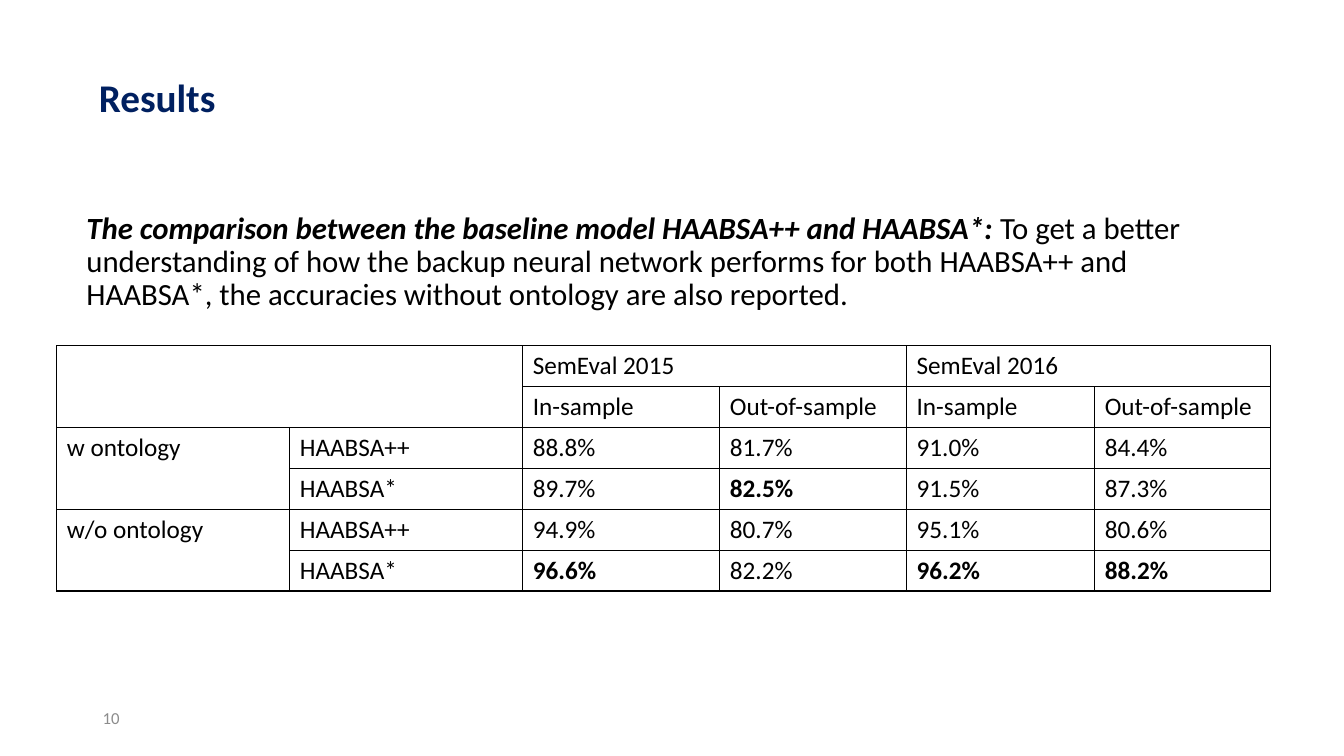
"""Build the results slide that compares HAABSA++ and HAABSA* accuracies."""
from dataclasses import dataclass

from lxml import etree
from pptx import Presentation
from pptx import util as u
from pptx.dml import color
from pptx.enum import text
from pptx.oxml import ns

FONT = "Calibri"
BLACK, NAVY, GREY = "000000", "002060", "8C8C8C"
COLUMN_WIDTHS = (166.4, 166.4, 140.8, 133.4, 134.4, 125.5)
ROW_HEIGHT = 29.2


@dataclass(frozen=True)
class Phrase:
    """A run of text with its look."""

    words: str
    size: float = 18
    colour: str = BLACK
    bold: bool = False
    italic: bool = False


@dataclass(frozen=True)
class Block:
    """A text frame's place in points, its phrases and line spacing."""

    left: float
    top: float
    width: float
    height: float
    phrases: tuple[Phrase, ...]
    spacing: float = 1.0
    anchor: text.MSO_ANCHOR = text.MSO_ANCHOR.MIDDLE


@dataclass(frozen=True)
class Entry:
    """A table cell with its row and column spans."""

    row: int
    column: int
    words: str
    bold: bool = False
    rows: int = 1
    columns: int = 1


TITLE = Block(63.4, 41, 896.6, 60.5, (Phrase("Results", 28, NAVY, True),), 0.9)
PAGE_NUMBER = Block(66.2, 500.4, 828, 25.2, (Phrase("10", 12, GREY),))
COMPARISON = Block(
    54.7, 148.3, 816.5, 342.7,
    (
        Phrase("The comparison between the baseline model HAABSA++ and HAABSA*: ",
               22, bold=True, italic=True),
        Phrase("To get a better understanding of how the backup neural network "
               "performs for both HAABSA++ and HAABSA*, the accuracies without "
               "ontology are also reported.", 22),
    ),
    0.9, text.MSO_ANCHOR.TOP,
)
SAMPLES = ("In-sample", "Out-of-sample") * 2
ACCURACIES = (
    ("HAABSA++", "88.8%", "81.7%", "91.0%", "84.4%"),
    ("HAABSA*", "89.7%", "82.5%", "91.5%", "87.3%"),
    ("HAABSA++", "94.9%", "80.7%", "95.1%", "80.6%"),
    ("HAABSA*", "96.6%", "82.2%", "96.2%", "88.2%"),
)
BEST = {"82.5%", "96.6%", "96.2%", "88.2%"}
ENTRIES = [
    Entry(0, 0, "", rows=2, columns=2),
    Entry(0, 2, "SemEval 2015", columns=2),
    Entry(0, 4, "SemEval 2016", columns=2),
    Entry(2, 0, "w ontology", rows=2),
    Entry(4, 0, "w/o ontology", rows=2),
    *(Entry(1, column, sample) for column, sample in enumerate(SAMPLES, 2)),
    *(Entry(row, column, value, value in BEST)
      for row, values in enumerate(ACCURACIES, 2)
      for column, value in enumerate(values, 1)),
]


def rgb(code: str) -> color.RGBColor:
    """Turn a hex string into a colour."""
    return color.RGBColor.from_string(code)


def add_phrase(paragraph, phrase: Phrase) -> None:
    """Add one formatted run to a paragraph."""
    run = paragraph.add_run()
    run.text = phrase.words
    run.font.name = FONT
    run.font.size = u.Pt(phrase.size)
    run.font.bold = phrase.bold
    run.font.italic = phrase.italic
    run.font.color.rgb = rgb(phrase.colour)


def fill_block(holder, block: Block) -> None:
    """Place a text holder and write its phrases."""
    holder.left, holder.top = u.Pt(block.left), u.Pt(block.top)
    holder.width, holder.height = u.Pt(block.width), u.Pt(block.height)
    frame = holder.text_frame
    frame.word_wrap = True
    frame.auto_size = text.MSO_AUTO_SIZE.NONE
    frame.vertical_anchor = block.anchor
    paragraph = frame.paragraphs[0]
    paragraph.alignment = text.PP_ALIGN.LEFT
    paragraph.line_spacing = block.spacing
    for phrase in block.phrases:
        add_phrase(paragraph, phrase)


def add_text(slide, block: Block) -> None:
    """Add a text box for a block."""
    fill_block(slide.shapes.add_textbox(0, 0, 0, 0), block)


def rule_cell(cell) -> None:
    """Give a cell thin black borders and no fill."""
    properties = cell._tc.get_or_add_tcPr()
    for side in ("lnL", "lnR", "lnT", "lnB"):
        border = etree.SubElement(properties, ns.qn(f"a:{side}"), w=str(u.Pt(1)))
        solid = etree.SubElement(border, ns.qn("a:solidFill"))
        etree.SubElement(solid, ns.qn("a:srgbClr"), val=BLACK)
    cell.fill.background()


def add_accuracy_table(slide) -> None:
    """Add the accuracy table with its merged headings."""
    row_count = len(ACCURACIES) + 2
    table = slide.shapes.add_table(
        row_count, len(COLUMN_WIDTHS), u.Pt(40.6), u.Pt(247),
        u.Pt(sum(COLUMN_WIDTHS)), u.Pt(ROW_HEIGHT * row_count)).table
    table.first_row = table.horz_banding = False
    for column, width in zip(table.columns, COLUMN_WIDTHS):
        column.width = u.Pt(width)
    for row in table.rows:
        row.height = u.Pt(ROW_HEIGHT)
    for cell in table.iter_cells():
        rule_cell(cell)
    for entry in ENTRIES:
        cell = table.cell(entry.row, entry.column)
        if entry.rows * entry.columns > 1:
            cell.merge(table.cell(entry.row + entry.rows - 1,
                                  entry.column + entry.columns - 1))
        if entry.words:
            add_phrase(cell.text_frame.paragraphs[0],
                       Phrase(entry.words, bold=entry.bold))


def main() -> None:
    """Build and save the slide."""
    deck = Presentation()
    deck.slide_width, deck.slide_height = u.Pt(960), u.Pt(540)
    slide = deck.slides.add_slide(deck.slide_layouts.get_by_name("Title Only"))
    add_accuracy_table(slide)
    fill_block(slide.shapes.title, TITLE)
    add_text(slide, PAGE_NUMBER)
    add_text(slide, COMPARISON)
    deck.save("out.pptx")


if __name__ == "__main__":
    main()
